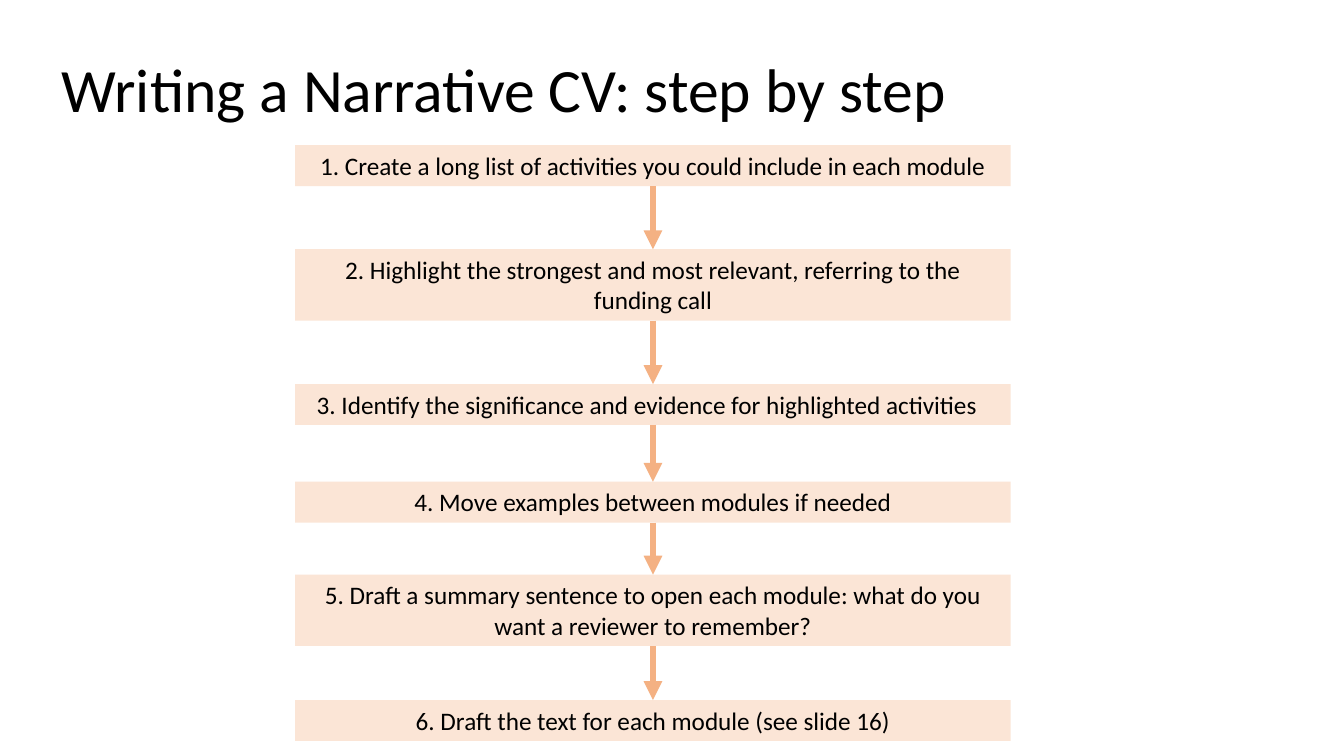
from itertools import pairwise

from lxml.etree import SubElement
from pptx import Presentation
from pptx.dml.color import RGBColor
from pptx.enum.shapes import MSO_CONNECTOR, MSO_SHAPE
from pptx.enum.text import MSO_ANCHOR, MSO_AUTO_SIZE, PP_ALIGN
from pptx.oxml.ns import qn
from pptx.util import Cm, Pt

STEPS = [
    (3.66, 1.03, 0.25, "1. Create a long list of activities you could include in each module"),
    (6.28, 1.8, 0.25, "2. Highlight the strongest and most relevant, referring to the funding call"),
    (9.68, 1.03, 0.55, "3. Identify the significance and evidence for highlighted activities"),
    (12.14, 1.03, 0.25, "4. Move examples between modules if needed"),
    (14.48, 1.8, 0.25, "5. Draft a summary sentence to open each module: what do you want a reviewer to remember?"),
    (17.64, 1.03, 0.25, "6. Draft the text for each module (see slide 16)"),
]
LEFT, WIDTH = 7.44, 18.03


def rgb(value):
    """Turn a hex string into a colour."""
    return RGBColor.from_string(value)


def style(obj, formats):
    """Set each attribute named in a dict of format values."""
    for name, value in formats.items():
        setattr(obj, name, value)


class FlowSlide:
    """Hold the style and the current slide."""

    font, ink, box_fill, arrow_color = "Calibri", "000000", "FBE5D6", "F4B183"

    def __init__(self, prs):
        """Add a blank slide."""
        self.shapes = prs.slides.add_slide(prs.slide_layouts[6]).shapes

    def label(self, sp, text, size, frame, para):
        """Put one styled paragraph into a shape."""
        tf = sp.text_frame
        style(tf, {"word_wrap": True, **frame})
        p = tf.paragraphs[0]
        style(p, para)
        r = p.add_run()
        r.text = text
        style(r.font, {"name": self.font, "size": Pt(size)})
        r.font.color.rgb = rgb(self.ink)

    def title(self, text, x, y, w, h):
        """Add the slide title."""
        sp = self.shapes.add_textbox(Cm(x), Cm(y), Cm(w), Cm(h))
        self.label(sp, text, 44, {"vertical_anchor": MSO_ANCHOR.MIDDLE}, {"line_spacing": 0.9})

    def step(self, text, x, y, w, h, inset):
        """Add a step box."""
        sp = self.shapes.add_shape(MSO_SHAPE.RECTANGLE, Cm(x), Cm(y), Cm(w), Cm(h))
        sp.shadow.inherit = False
        sp.fill.solid()
        sp.fill.fore_color.rgb = rgb(self.box_fill)
        sp.line.fill.background()
        frame = {
            "vertical_anchor": MSO_ANCHOR.TOP,
            "auto_size": MSO_AUTO_SIZE.SHAPE_TO_FIT_TEXT,
            "margin_right": Cm(inset),
        }
        self.label(sp, text, 18, frame, {"alignment": PP_ALIGN.CENTER})

    def arrow(self, x, top, bottom):
        """Add a downward arrow."""
        sp = self.shapes.add_connector(MSO_CONNECTOR.STRAIGHT, Cm(x), Cm(top), Cm(x), Cm(bottom))
        sp.line.width = Pt(4.5)
        sp.line.color.rgb = rgb(self.arrow_color)
        sp_pr = sp._element.spPr
        SubElement(sp_pr.find(qn("a:ln")), qn("a:tailEnd"), type="triangle")
        SubElement(sp_pr, qn("a:effectLst"))


def main():
    """Build and save the slide."""
    prs = Presentation()
    style(prs, {"slide_width": Cm(33.87), "slide_height": Cm(19.05)})
    s = FlowSlide(prs)
    s.title("Writing a Narrative CV: step by step", 1.3, 0.5, 29.21, 3.68)
    for top, height, inset, text in STEPS:
        s.step(text, LEFT, top, WIDTH, height, inset)
    for (top, height, *_), (next_top, *_) in pairwise(STEPS):
        s.arrow(LEFT + WIDTH / 2, top + height, next_top)
    prs.save("out.pptx")


if __name__ == "__main__":
    main()
